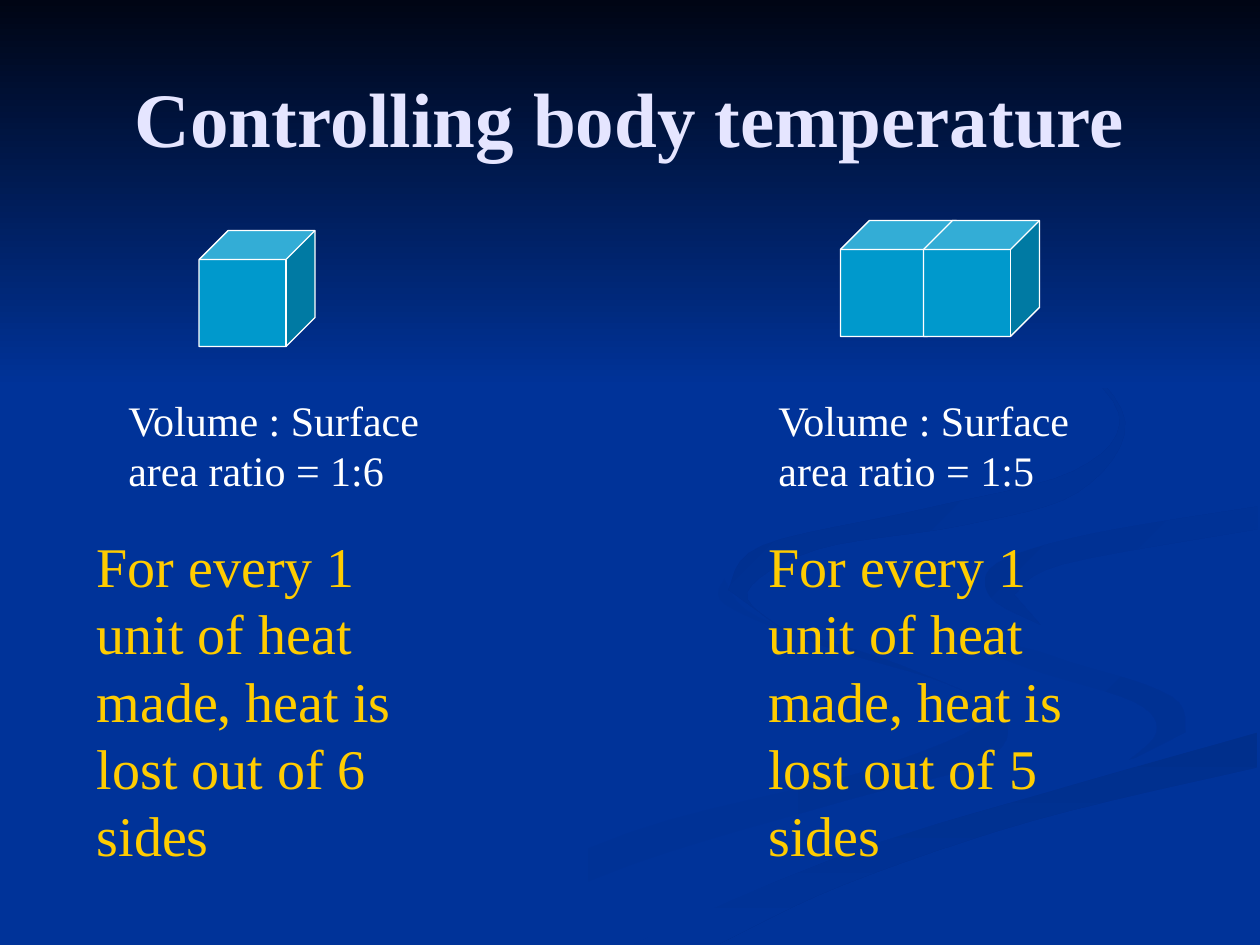
from pptx import Presentation
from pptx.dml.color import RGBColor
from pptx.enum.shapes import MSO_SHAPE as Shape
from pptx.enum.text import MSO_ANCHOR as Anchor, PP_ALIGN as Align
from pptx.util import Inches, Pt

FONT = "Times New Roman"
BLUE, WHITE, LAVENDER, YELLOW, TEAL = "003399", "FFFFFF", "E5E5FF", "FFCC00", "0099CC"

# Each ribbon: fill colours, clockwise gradient angle, and the knots of its two edges.
RIBBONS = [
    ((BLUE, "003193"), 0,
     [(5.75, 4.59), (5.76, 4.8), (6.54, 5.13), (7.52, 5.43), (7.85, 5.7),
      (6.84, 6.13), (4.99, 6.61), (3, 7.49)],
     [(3.61, 7.49), (4.99, 6.87), (6.76, 6.34), (7.8, 6.05), (7.95, 5.67),
      (7.15, 5.28), (6.02, 4.9), (5.75, 4.6)]),
    ((BLUE, "003193"), 45,
     [(7.24, 4.64), (7.46, 5), (8.15, 5.3), (9, 5.57), (9.18, 5.81), (8.94, 6.05)],
     [(9.41, 5.81), (9.3, 5.53), (8.5, 5.24), (7.58, 4.98), (7.24, 4.64)]),
    (("002F8C", BLUE), 90,
     [(5.03, 7.49), (5.69, 7.19), (6.96, 6.69), (8.31, 6.29), (9.98, 5.81)],
     [(9.98, 6.09), (8.21, 6.51), (6.7, 7.02), (5.71, 7.49)]),
    ((BLUE,), 0,
     [(9.99, 3.87), (8.74, 4.08), (7.55, 4.32), (7.28, 4.74), (8.31, 5.19),
      (9.31, 5.53), (9.26, 5.93), (7.43, 6.43), (4.77, 7.49)],
     [(5.03, 7.49), (6.96, 6.69), (9.99, 5.81)],
     [(9.99, 5.38), (8.66, 5.09), (7.81, 4.63), (8.35, 4.3), (9.99, 4.02)]),
    (("003091", BLUE), 45,
     [(9.98, 4.02), (8.65, 4.24), (7.91, 4.47), (7.86, 4.74), (8.26, 4.96)],
     [(8.05, 4.72), (8.43, 4.48), (9.98, 4.2)]),
    (("002F8E", BLUE), 45,
     [(7.62, 2.33), (8.43, 2.75), (8.93, 3.35), (8.55, 3.91), (7.64, 4.17),
      (6.49, 4.36), (5.93, 4.7), (6.22, 5)],
     [(5.78, 4.68), (6.05, 4.33), (7.33, 4.04), (8.52, 3.74), (8.88, 3.28),
      (8.26, 2.66), (7.62, 2.33)]),
]


def rgb(color):
    return RGBColor.from_string(color)


def smooth(knots, steps=6):
    """Return points of a Catmull-Rom curve through the knots."""
    padded = [knots[0], *knots, knots[-1]]
    points = [knots[0]]
    for window in zip(padded, padded[1:], padded[2:], padded[3:]):
        for step in range(1, steps + 1):
            t = step / steps
            points.append(tuple(
                b + t * ((c - a) + t * ((2 * a - 5 * b + 4 * c - d)
                                        + t * (3 * b - a - 3 * c + d))) / 2
                for a, b, c, d in zip(*window)))
    return points


def write(frame, text, *, size, color, bold=False, align=Align.LEFT, line_spacing=None):
    frame.word_wrap = True
    paragraph = frame.paragraphs[0]
    paragraph.alignment = align
    paragraph.line_spacing = line_spacing
    run = paragraph.add_run()
    run.text = text
    run.font.name, run.font.size, run.font.bold = FONT, Pt(size), bold
    run.font.color.rgb = rgb(color)


def fill_shape(shape, colors, angle=0):
    """Fill with one colour, or with a gradient of two at a clockwise angle."""
    shape.shadow.inherit = False
    if len(colors) == 1:
        shape.fill.solid()
        shape.fill.fore_color.rgb = rgb(colors[0])
        return
    shape.fill.gradient()
    shape.fill.gradient_angle = (360 - angle) % 360
    for stop, color in zip(shape.fill.gradient_stops, colors):
        stop.color.rgb = rgb(color)


class SlideBuilder:
    """Holds the current slide and draws elements in the deck's style."""

    def __init__(self, presentation):
        self.slide = presentation.slides.add_slide(presentation.slide_layouts[5])
        self.shapes = self.slide.shapes
        background = self.slide.background.fill
        background.solid()
        background.fore_color.rgb = rgb(BLUE)

    def ribbon(self, colors, angle, *edges):
        unit = 1000
        points = [(x * unit, y * unit) for edge in edges for x, y in smooth(edge)]
        builder = self.shapes.build_freeform(*points[0], scale=Inches(1) / unit)
        builder.add_line_segments(points[1:], close=True)
        shape = builder.convert_to_shape()
        fill_shape(shape, colors, angle)
        shape.line.fill.background()

    def sky(self, height):
        shape = self.shapes.add_shape(Shape.RECTANGLE, 0, 0, Inches(10), Inches(height))
        fill_shape(shape, ("000514", BLUE), 90)
        shape.line.fill.background()

    def title(self, text, left, top, width, height):
        title = self.shapes.title
        title.left, title.top = Inches(left), Inches(top)
        title.width, title.height = Inches(width), Inches(height)
        title.text_frame.vertical_anchor = Anchor.MIDDLE
        write(title.text_frame, text, size=44, color=LAVENDER, bold=True, align=Align.CENTER)
        # Bring the title in front of the backdrop.
        title.element.getparent().append(title.element)

    def cube(self, left, top, side=0.92):
        shape = self.shapes.add_shape(
            Shape.CUBE, Inches(left), Inches(top), Inches(side), Inches(side))
        fill_shape(shape, (TEAL,))
        shape.line.color.rgb = rgb(WHITE)
        shape.line.width = Pt(0.75)

    def text(self, text, left, top, width, height, *, size, color):
        box = self.shapes.add_textbox(
            Inches(left), Inches(top), Inches(width), Inches(height))
        write(box.text_frame, text, size=size, color=color, line_spacing=Pt(1.2 * size))


def main():
    presentation = Presentation()
    presentation.slide_width, presentation.slide_height = Inches(10), Inches(7.5)
    builder = SlideBuilder(presentation)
    for ribbon in RIBBONS:
        builder.ribbon(*ribbon)
    builder.sky(3.08)
    builder.title("Controlling body temperature", 0.5, 0.3, 9, 1.25)

    for left, top in [(1.58, 1.83), (6.67, 1.75), (7.33, 1.75)]:
        builder.cube(left, top)
    for sides, ratio_left, heat_left in [(6, 0.92, 0.67), (5, 6.08, 6)]:
        builder.text(f"Volume : Surface area ratio = 1:{sides}",
                     ratio_left, 3.08, 2.58, 0.9, size=24, color=WHITE)
        builder.text(f"For every 1 unit of heat made, heat is lost out of {sides} sides",
                     heat_left, 4.17, 3, 2.23, size=32, color=YELLOW)

    presentation.save("out.pptx")


if __name__ == "__main__":
    main()
